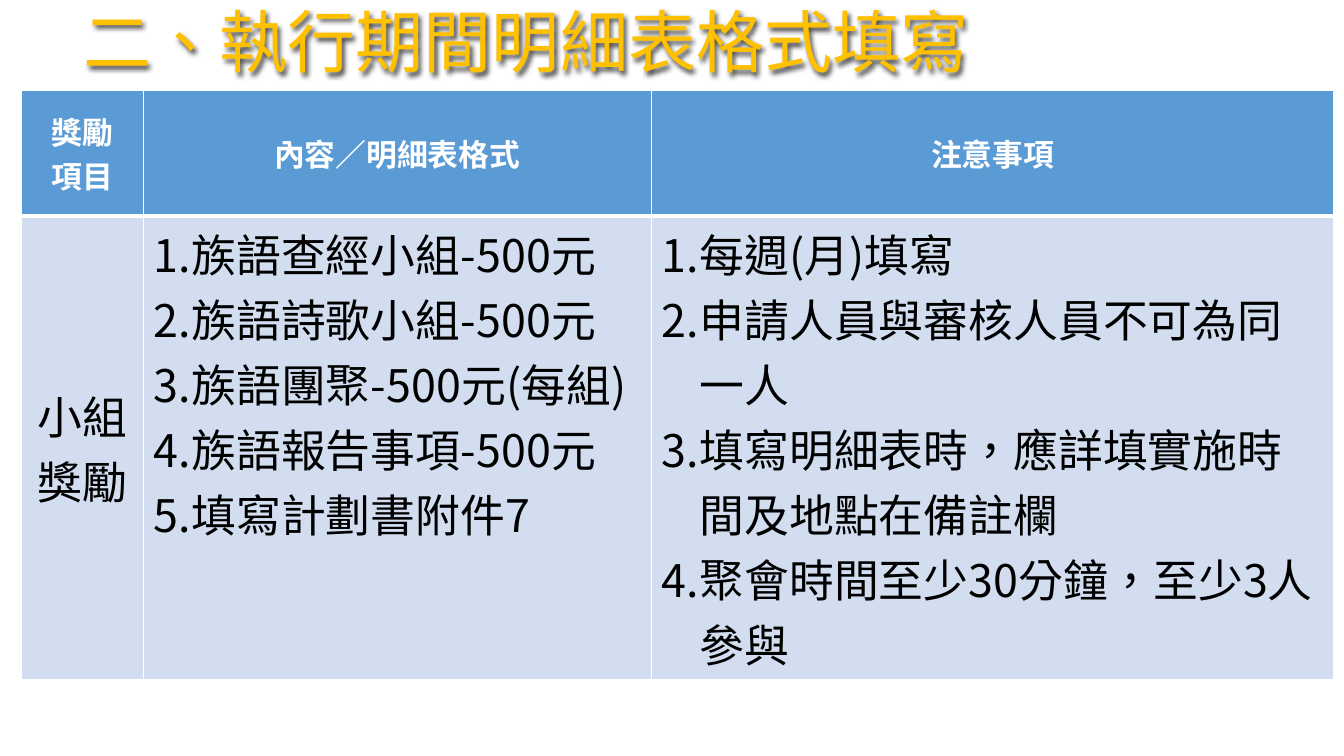
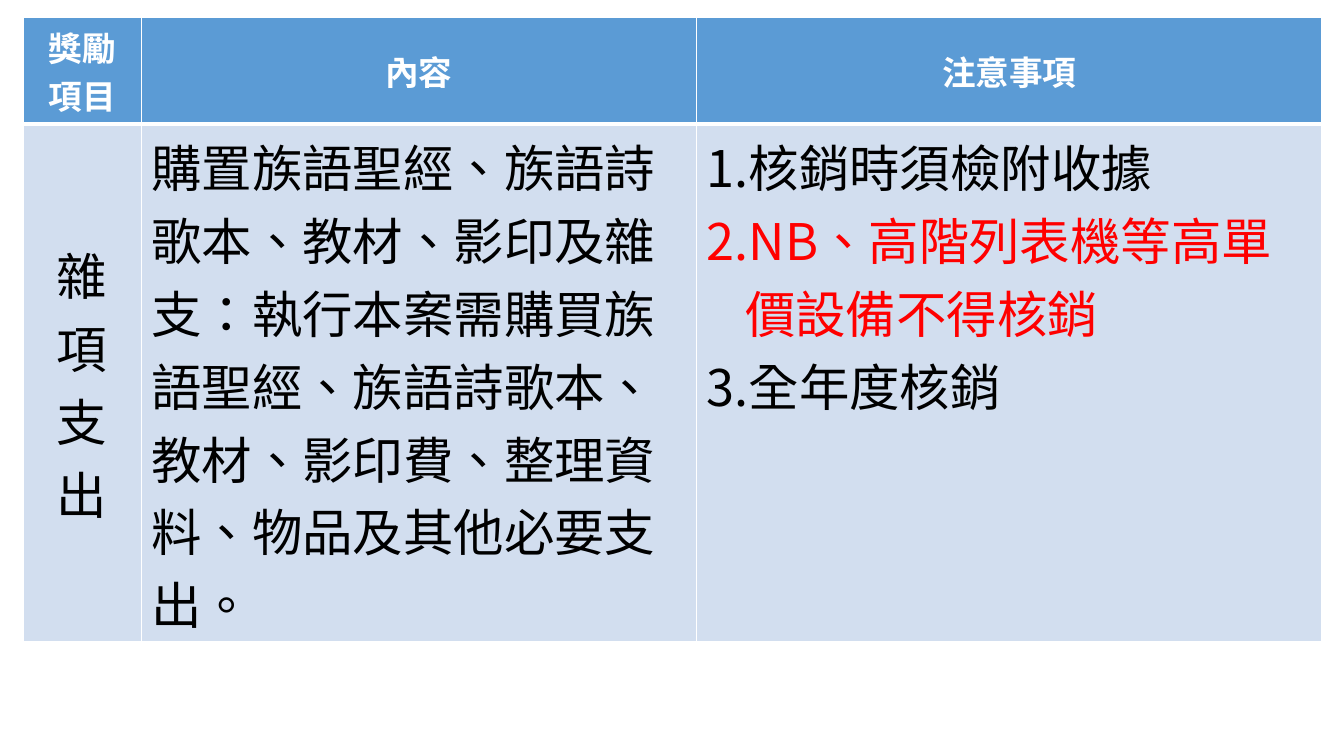
from lxml import etree
from pptx import Presentation
from pptx import util as u
from pptx.dml.color import RGBColor
from pptx.enum import text
from pptx.oxml import parse_xml
from pptx.oxml.ns import nsdecls, qn

FONT = "Noto Sans CJK JP"
WHITE = RGBColor(0xFF, 0xFF, 0xFF)
BLACK = RGBColor(0, 0, 0)
RED = RGBColor(0xFF, 0, 0)
GOLD = RGBColor(0xFF, 0xC0, 0)
HEADER_BLUE = RGBColor(0x5B, 0x9B, 0xD5)
BODY_BLUE = RGBColor(0xD2, 0xDE, 0xEF)
INDENT = u.Inches(0.38)

TITLE = "二、執行期間明細表格式填寫"

# One table per slide; a list in the body becomes a numbered list
SLIDES = [
    dict(
        title=TITLE, left=0.21, top=0.9,
        cols=[1.21, 5.04, 6.77], rows=[1.24, 4.6], sizes=[22, 32],
        header=["獎勵\n項目", "內容／明細表格式", "注意事項"],
        body=[
            "小組獎勵",
            ["族語查經小組-500元", "族語詩歌小組-500元", "族語團聚-500元(每組)",
             "族語報告事項-500元", "填寫計劃書附件7"],
            ["每週(月)填寫", "申請人員與審核人員不可為同一人",
             "填寫明細表時，應詳填實施時間及地點在備註欄",
             "聚會時間至少30分鐘，至少3人參與"],
        ],
        red=[],
    ),
    dict(
        title=None, left=0.23, top=0.17,
        cols=[1.17, 5.51, 6.2], rows=[1.06, 5.14], sizes=[24, 36],
        header=["獎勵項目", "內容", "注意事項"],
        body=[
            "雜項支出",
            "購置族語聖經、族語詩歌本、教材、影印及雜支：執行本案需購買族語聖經、"
            "族語詩歌本、教材、影印費、整理資料、物品及其他必要支出。",
            ["核銷時須檢附收據", "NB、高階列表機等高單價設備不得核銷", "全年度核銷"],
        ],
        red=["NB、高階列表機等高單價設備不得核銷"],
    ),
]


def style_run(r, size, color, bold=False):
    r.font.name = FONT
    r.font.size = u.Pt(size)
    r.font.bold = bold
    r.font.color.rgb = color
    rPr = r.font._element
    rPr.set("lang", "zh-TW")
    rPr.find(qn("a:latin")).addnext(
        parse_xml(f'<a:ea {nsdecls("a")} typeface="{FONT}"/>'))


def style_cell(cell, fill, bottom):
    tcPr = cell._tc.get_or_add_tcPr()
    for side, width in (("L", 1), ("R", 1), ("T", 1), ("B", bottom)):
        tcPr.append(parse_xml(
            f'<a:ln{side} {nsdecls("a")} w="{u.Pt(width)}"><a:solidFill>'
            f'<a:srgbClr val="{WHITE}"/></a:solidFill></a:ln{side}>'))
    cell.fill.solid()
    cell.fill.fore_color.rgb = fill


prs = Presentation()
prs.slide_width = u.Inches(13.33)
prs.slide_height = u.Inches(7.5)

for data in SLIDES:
    s = prs.slides.add_slide(prs.slide_layouts[6])

    # Title with a soft dark shadow
    if data["title"]:
        sp = s.shapes.add_textbox(u.Inches(0.73), 0, u.Inches(11.92), u.Inches(0.9))
        sp._element.spPr.append(parse_xml(
            f'<a:effectLst {nsdecls("a")}><a:outerShdw blurRad="{u.Pt(4)}" '
            f'dist="{u.Pt(2)}" dir="2700000" algn="tl"><a:srgbClr val="000000">'
            '<a:alpha val="70000"/></a:srgbClr></a:outerShdw></a:effectLst>'))
        tf = sp.text_frame
        tf.word_wrap = True
        tf.vertical_anchor = text.MSO_ANCHOR.MIDDLE
        tf.text = data["title"]
        tf.paragraphs[0].line_spacing = 0.9
        style_run(tf.paragraphs[0].runs[0], 48.6, GOLD)

    # Table grid
    table = s.shapes.add_table(
        2, 3, u.Inches(data["left"]), u.Inches(data["top"]),
        u.Inches(sum(data["cols"])), u.Inches(sum(data["rows"]))).table
    table.horz_banding = False
    for col, width in zip(table.columns, data["cols"]):
        col.width = u.Inches(width)
    for row, height in zip(table.rows, data["rows"]):
        row.height = u.Inches(height)

    # Header row
    for cell, label in zip(table.rows[0].cells, data["header"]):
        style_cell(cell, HEADER_BLUE, 3)
        cell.vertical_anchor = text.MSO_ANCHOR.MIDDLE
        cell.text_frame.text = label
        for p in cell.text_frame.paragraphs:
            p.alignment = text.PP_ALIGN.CENTER
            style_run(p.runs[0], data["sizes"][0], WHITE, bold=True)

    # Body row
    for cell, content in zip(table.rows[1].cells, data["body"]):
        style_cell(cell, BODY_BLUE, 1)
        numbered = isinstance(content, list)
        cell.text_frame.text = "\n".join(content) if numbered else content
        for p in cell.text_frame.paragraphs:
            color = RED if p.text in data["red"] else BLACK
            style_run(p.runs[0], data["sizes"][1], color)
            if numbered:
                pPr = p._p.get_or_add_pPr()
                pPr.set("marL", str(INDENT))
                pPr.set("indent", str(-INDENT))
                etree.SubElement(pPr, qn("a:buFont"), typeface=FONT)
                etree.SubElement(pPr, qn("a:buAutoNum"), type="arabicPeriod")

    # Vertical label in the first column
    label_cell = table.cell(1, 0)
    label_cell.vertical_anchor = text.MSO_ANCHOR.MIDDLE
    label_cell._tc.get_or_add_tcPr().set("vert", "eaVert")
    label_cell.text_frame.paragraphs[0].alignment = text.PP_ALIGN.CENTER

prs.save("out.pptx")
